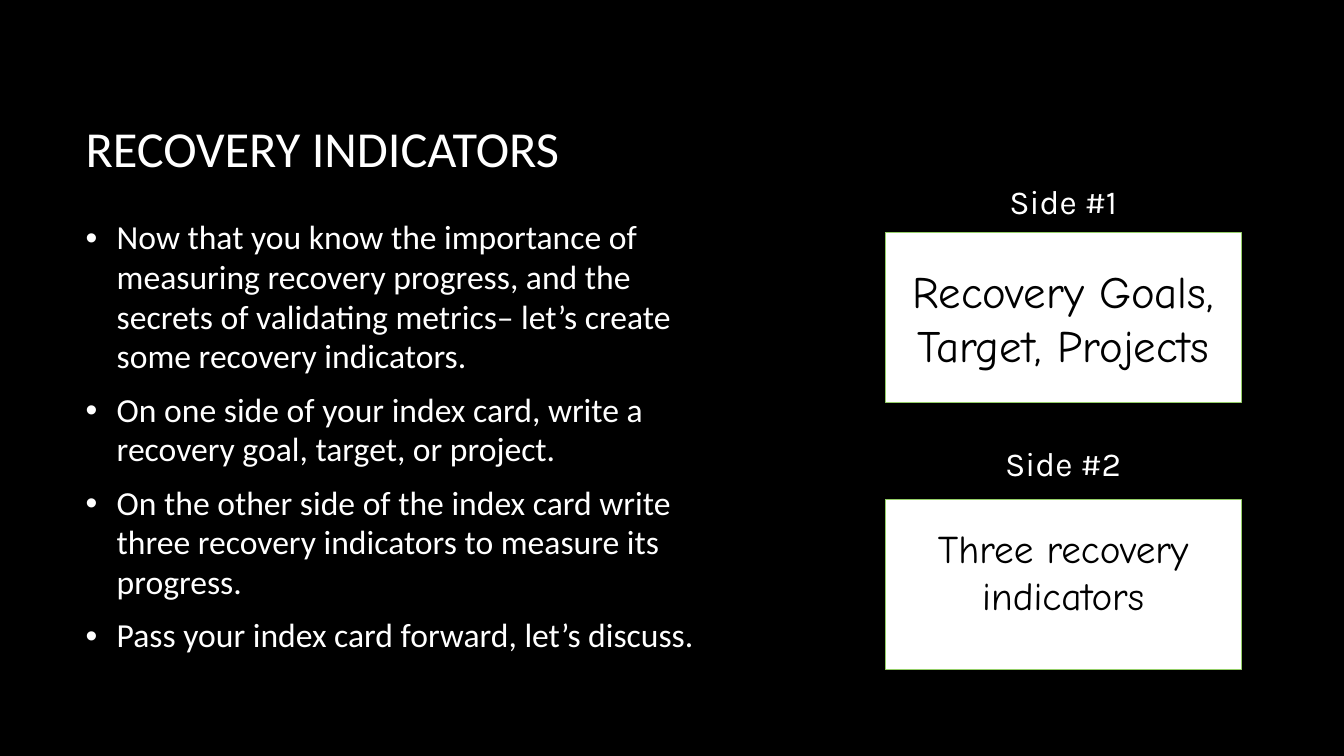
from lxml.etree import SubElement
from pptx import Presentation
from pptx.dml.color import RGBColor
from pptx.enum.shapes import MSO_SHAPE
from pptx.enum.text import MSO_ANCHOR, PP_ALIGN
from pptx.oxml.ns import qn
from pptx.util import Inches, Pt

BULLETS = [
    "Now that you know the importance of measuring recovery progress, and the "
    "secrets of validating metrics– let’s create some recovery indicators.",
    "On one side of your index card, write a recovery goal, target, or project.",
    "On the other side of the index card write three recovery indicators to measure its progress.",
    "Pass your index card forward, let’s discuss.",
]
# label, label top, text, text size, card top, bottom margin
CARDS = [
    ("Side #1", 1.75, "Recovery Goals, Target, Projects", 32, 2.31, 0.05),
    ("Side #2", 4.34, "Three recovery indicators", 28, 4.96, 0.31),
]
LEFT_MARGIN = 0.75
CARD_LEFT, CARD_WIDTH, CARD_HEIGHT = 8.78, 3.53, 1.68
LABEL_WIDTH, LABEL_HEIGHT = 2.57, 0.5


def color(hex_code):
    return RGBColor.from_string(hex_code)


def style(para, font_name, size, hex_code):
    para.font.name = font_name
    para.font.size = Pt(size)
    para.font.color.rgb = color(hex_code)


def add_text(slide, box, lines, font_name, size, anchor=MSO_ANCHOR.MIDDLE):
    frame = slide.shapes.add_textbox(*map(Inches, box)).text_frame
    frame.word_wrap = True
    frame.vertical_anchor = anchor
    frame.text = "\n".join(lines)
    for para in frame.paragraphs:
        style(para, font_name, size, "FFFFFF")
    return frame


def add_bullet(para):
    properties = para._p.get_or_add_pPr()
    properties.set("marL", str(Inches(0.31)))
    properties.set("indent", str(-Inches(0.31)))
    SubElement(properties, qn("a:buFont"), typeface="Arial")
    SubElement(properties, qn("a:buChar"), char="•")


def add_instructions(slide, box):
    frame = add_text(slide, box, BULLETS, "Calibri", 24)
    for para in frame.paragraphs:
        add_bullet(para)
        para.line_spacing = 0.98
        para.space_after = Pt(10)


def add_card(slide, box, text, size, bottom_margin):
    card = slide.shapes.add_shape(MSO_SHAPE.RECTANGLE, *map(Inches, box))
    card.shadow.inherit = False
    card.fill.solid()
    card.fill.fore_color.rgb = color("FFFFFF")
    card.line.color.rgb = color("94CE67")
    card.line.width = Pt(0.75)
    frame = card.text_frame
    frame.word_wrap = True
    frame.vertical_anchor = MSO_ANCHOR.MIDDLE
    frame.margin_bottom = Inches(bottom_margin)
    frame.text = text
    para = frame.paragraphs[0]
    para.alignment = PP_ALIGN.CENTER
    style(para, "Comic Neue", size, "000000")


def add_index_cards(slide):
    label_left = CARD_LEFT + (CARD_WIDTH - LABEL_WIDTH) / 2
    for label, label_top, text, size, card_top, bottom_margin in CARDS:
        label_box = (label_left, label_top, LABEL_WIDTH, LABEL_HEIGHT)
        frame = add_text(slide, label_box, [label], "Karla", 24, MSO_ANCHOR.TOP)
        frame.paragraphs[0].alignment = PP_ALIGN.CENTER
        card_box = (CARD_LEFT, card_top, CARD_WIDTH, CARD_HEIGHT)
        add_card(slide, card_box, text, size, bottom_margin)


def main():
    deck = Presentation()
    deck.slide_width, deck.slide_height = Inches(13.33), Inches(7.5)
    slide = deck.slides.add_slide(deck.slide_layouts[6])
    slide.background.fill.solid()
    slide.background.fill.fore_color.rgb = color("000000")
    add_text(slide, (LEFT_MARGIN, 0.67, 11.08, 1.59), ["RECOVERY INDICATORS"], "Calibri", 36)
    add_instructions(slide, (LEFT_MARGIN, 2.34, 6.57, 3.99))
    add_index_cards(slide)
    deck.save("out.pptx")


if __name__ == "__main__":
    main()
